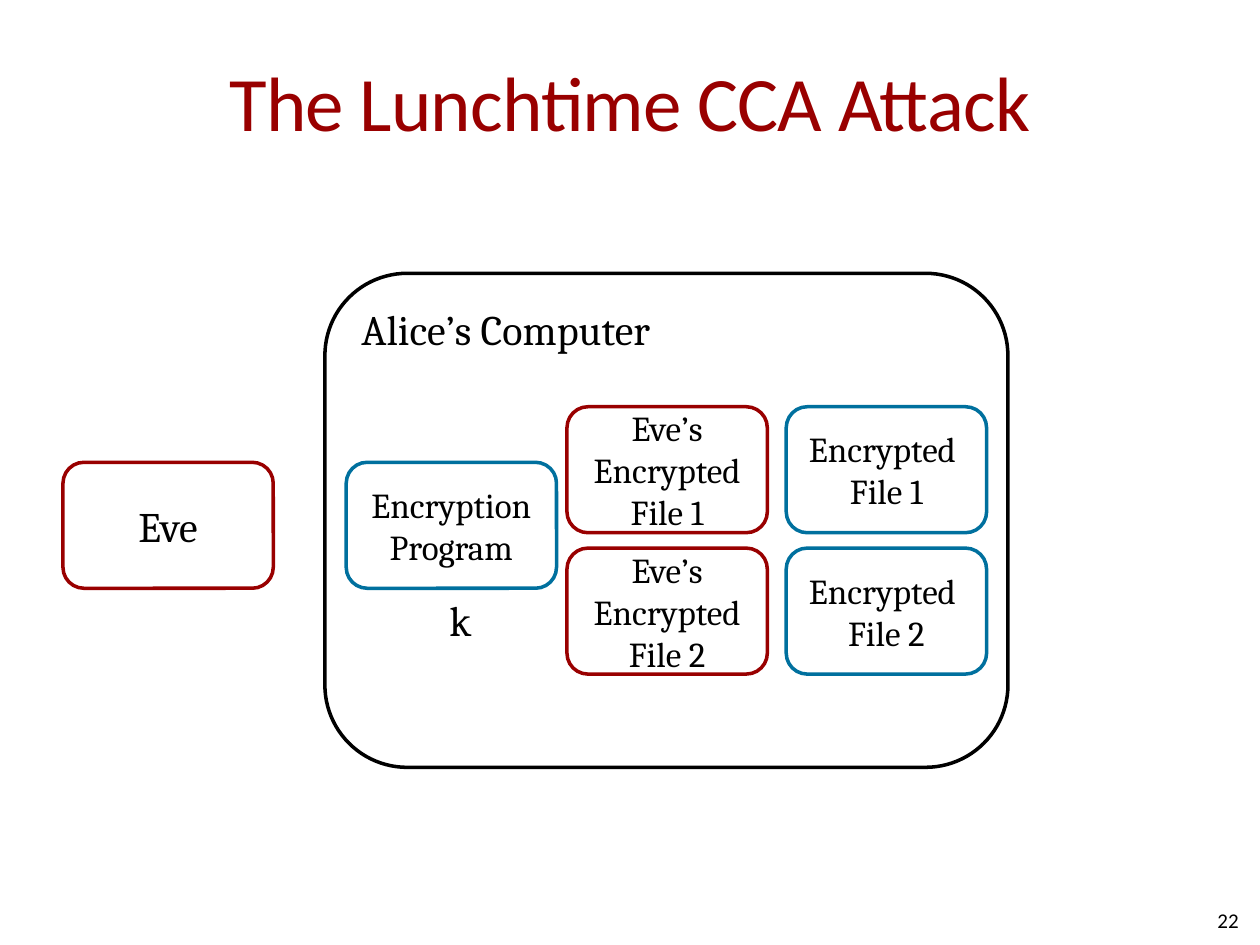
from itertools import product

from pptx import Presentation
from pptx.dml.color import RGBColor
from pptx.enum.shapes import MSO_SHAPE as Shape
from pptx.enum.text import MSO_ANCHOR as Anchor, MSO_AUTO_SIZE as AutoSize, PP_ALIGN as Align
from pptx.util import Cm, Pt

RED = RGBColor(0x99, 0x00, 0x00)
BLUE = RGBColor(0x00, 0x70, 0x9E)
BLACK = RGBColor(0x00, 0x00, 0x00)
WHITE = RGBColor(0xFF, 0xFF, 0xFF)
HEADING_FONT, BODY_FONT = "Calibri", "Cambria"


def write(frame, text, size, font=BODY_FONT, color=BLACK, align=Align.CENTER,
          anchor=Anchor.MIDDLE, insets=(0.25, 0.13)):
    """Fill a text frame and format its runs."""
    frame.text = text
    frame.word_wrap = True
    frame.vertical_anchor = anchor
    frame.margin_left = frame.margin_right = Cm(insets[0])
    frame.margin_top = frame.margin_bottom = Cm(insets[1])
    for paragraph in frame.paragraphs:
        paragraph.alignment = align
        for run in paragraph.runs:
            run.font.size, run.font.name = Pt(size), font
            run.font.color.rgb = color


def add_box(slide, left, top, width, height, line_color, text, size, **style):
    """Add a white rounded box with a coloured outline."""
    box = slide.shapes.add_shape(Shape.ROUNDED_RECTANGLE, Cm(left), Cm(top), Cm(width), Cm(height))
    box.shadow.inherit = False
    box.fill.solid()
    box.fill.fore_color.rgb = WHITE
    box.line.color.rgb = line_color
    box.line.width = Pt(2)
    write(box.text_frame, text, size, **style)


def add_title(slide, left, top, width, height):
    """Place the slide title in its placeholder."""
    title = slide.shapes.title
    title.left, title.top, title.width, title.height = Cm(left), Cm(top), Cm(width), Cm(height)
    write(title.text_frame, "The Lunchtime CCA Attack", 44, HEADING_FONT, RED, insets=(0, 0.13))
    title.text_frame.auto_size = AutoSize.NONE
    for run in title.text_frame.paragraphs[0].runs:
        run.font._element.set("spc", "-50")


def add_files(slide, left, top, width, height):
    """Place the two-by-two grid of encrypted files."""
    file_width, file_height = 4.04, 2.54
    columns = (("Eve’s Encrypted File", RED), ("Encrypted \vFile", BLUE))
    for (column, (label, color)), row in product(enumerate(columns), range(2)):
        add_box(slide, left + column * (width - file_width), top + row * (height - file_height),
                file_width, file_height, color, f"{label} {row + 1}", 20)


def add_computer(slide, left, top, width, height):
    """Place Alice's computer with its program, key and files."""
    add_box(slide, left, top, width, height, BLACK, "Alice’s Computer", 24,
            align=Align.LEFT, anchor=Anchor.TOP)
    add_box(slide, left + 0.43, top + 3.81, 4.24, 2.54, BLUE, "Encryption Program", 20)
    key = slide.shapes.add_textbox(Cm(left + 2.26), Cm(top + 6.35), Cm(0.97), Cm(1.27))
    write(key.text_frame, "k", 24, align=Align.LEFT, anchor=Anchor.TOP)
    key.text_frame.word_wrap = False
    key.text_frame.auto_size = AutoSize.SHAPE_TO_FIT_TEXT
    add_files(slide, left + 4.88, top + 2.69, 8.46, 5.39)


def add_slide_number(slide, left, top, width, height):
    """Place the slide number."""
    number = slide.shapes.add_textbox(Cm(left), Cm(top), Cm(width), Cm(height))
    write(number.text_frame, "22", 12, HEADING_FONT, align=Align.RIGHT, insets=(0, 0))


def main():
    """Build and save the slide."""
    deck = Presentation()
    deck.slide_width, deck.slide_height = Cm(25.4), Cm(19.05)
    slide = deck.slides.add_slide(deck.slide_layouts[5])
    add_title(slide, 1.27, 0.43, 22.86, 3.18)
    add_slide_number(slide, 19.05, 18.03, 5.92, 1.02)
    add_computer(slide, 6.55, 5.51, 13.77, 9.96)
    add_box(slide, 1.27, 9.32, 4.24, 2.54, RED, "Eve", 24, insets=(0, 0))
    deck.save("out.pptx")


if __name__ == "__main__":
    main()
